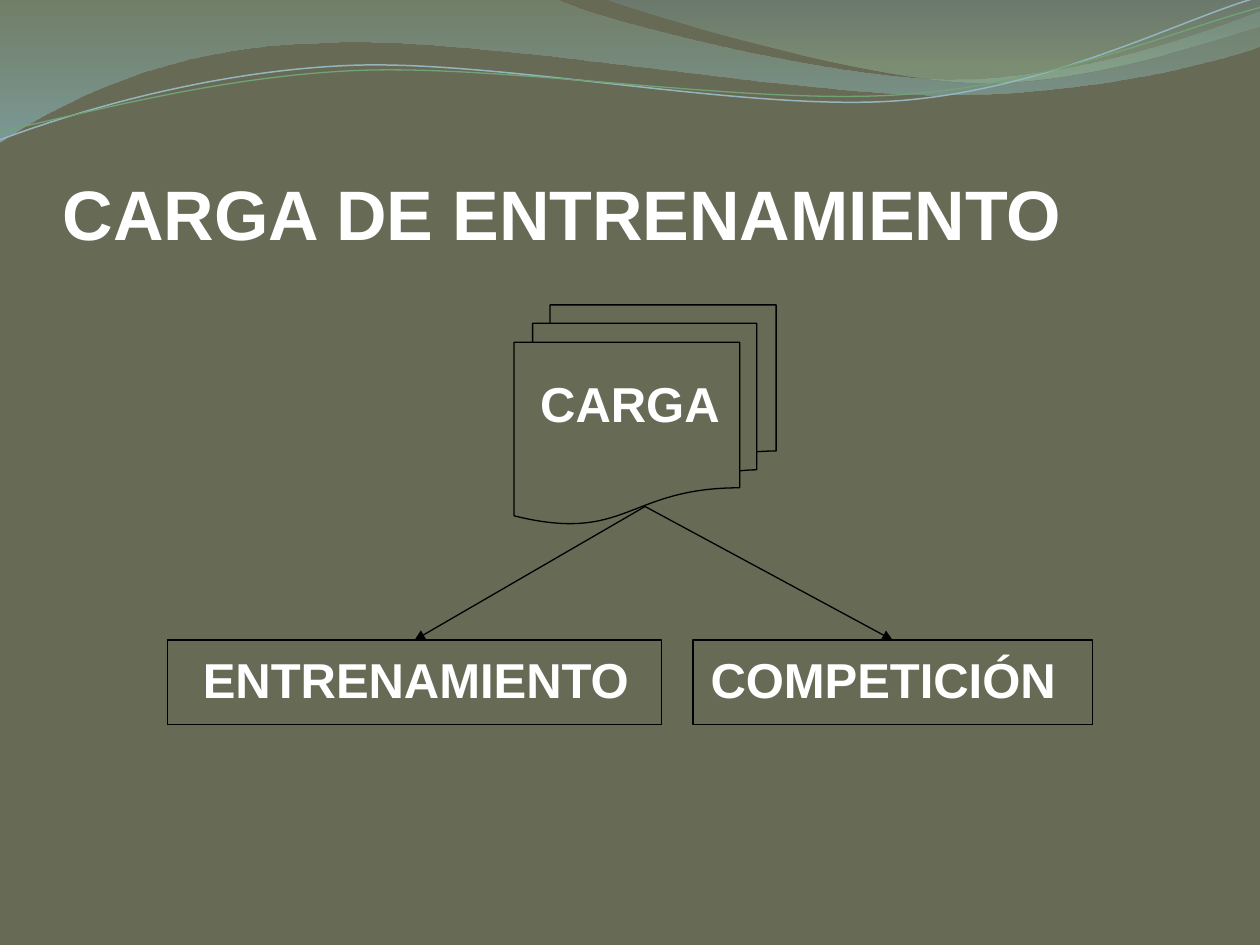
from pptx import Presentation
from pptx.dml.color import RGBColor
from pptx.enum.shapes import MSO_CONNECTOR as Connector, MSO_SHAPE as Shape
from pptx.enum.text import MSO_ANCHOR as Anchor, PP_ALIGN as Align
from pptx.oxml.ns import qn
from pptx.util import Inches, Pt
from lxml.etree import SubElement

THEME = {
    "font": "Arial", "title": 40, "label": 28, "line": 0.75,
    "background": "676A55", "text": "FFFFFF", "outline": "000000",
}

TITLE = "CARGA DE ENTRENAMIENTO"
# Text, preset, (left, top, width, height), (right, bottom) text insets
LOAD = ("CARGA", Shape.FLOWCHART_MULTIDOCUMENT, (4.08, 2.42, 2.08, 1.74), (0.05, 0.47))
KINDS = [
    ("ENTRENAMIENTO", Shape.RECTANGLE, (1.33, 5.08, 3.92, 0.67), (0.08, 0.11)),
    ("COMPETICIÓN", Shape.RECTANGLE, (5.5, 5.08, 3.17, 0.67), (0.25, 0.11)),
]
ARROW_START_Y = 4.02

# Outlines: two numbers are a corner, six are a Bézier curve.
# Gradient stops: position, colour, opacity in percent
BANDS = [
    ([(0, 0), (4.4, -0.01), (4.76, 0.17, 6.64, 0.63, 7.58, 0.63),
      (8.53, 0.63, 9.58, 0.26, 10, 0.09), (10.01, 0.36),
      (9.83, 0.44, 8.7, 0.76, 7.46, 0.75), (6.22, 0.75, 3.82, 0.28, 2.57, 0.34),
      (1.29, 0.36, 0.46, 0.83, -0.01, 1.13)],
     [(0, "809980", 45), (1, "8DC1CF", 55)]),
    ([(4.79, -0.01), (5.09, 0.11, 6.82, 0.62, 7.69, 0.65),
      (8.56, 0.69, 9.61, 0.32, 10, 0.21), (10, 0)],
     [(0, "779BA4", 30), (0.8, "96B996", 45)]),
]
WAVES = [
    ([(0, 1.11), (0.48, 0.93, 1.58, 0.57, 2.77, 0.52),
      (3.95, 0.47, 5.93, 0.89, 7.13, 0.8), (8.33, 0.71, 9.38, 0.15, 9.98, -0.02)],
     "94B5BE", 0.85),
    ([(0, 1.04), (0.47, 0.96, 1.64, 0.61, 2.83, 0.56),
      (4.03, 0.51, 5.97, 0.84, 7.17, 0.75), (8.36, 0.67, 9.41, 0.21, 10, 0.06)],
     "72A376", 0.75),
]


def color(name):
    return RGBColor.from_string(THEME.get(name, name))


def add_outline(page, outline, close):
    """Join the corners, then bend the sides that are Bézier curves."""
    corners = [tuple(map(Inches, part[-2:])) for part in outline]
    builder = page.shapes.build_freeform(*corners[0])
    builder.add_line_segments(corners[1:], close=close)
    shape = builder.convert_to_shape()
    shape.shadow.inherit = False
    sides = list(shape._element.spPr.iter(qn("a:lnTo")))
    for side, part in zip(sides, outline[1:]):
        if len(part) == 6:
            side.tag = qn("a:cubicBezTo")
            for point in list(side):
                side.remove(point)
            for x, y in zip(part[::2], part[1::2]):
                SubElement(side, qn("a:pt"), x=str(Inches(x) - shape.left),
                           y=str(Inches(y) - shape.top))
    return shape


def set_line(line, line_color, width):
    line.color.rgb = color(line_color)
    line.width = Pt(width)


def add_band(page, outline, stops):
    band = add_outline(page, outline, True)
    band.line.fill.background()
    band.fill.gradient()
    band.fill.gradient_angle = 270
    for stop, (position, stop_color, _) in zip(band.fill.gradient_stops, stops):
        stop.position = position
        stop.color.rgb = color(stop_color)
    for element, (_, _, opacity) in zip(band._element.spPr.iter(qn("a:srgbClr")), stops):
        SubElement(element, qn("a:alpha"), val=str(opacity * 1000))


def add_wave(page, outline, line_color, width):
    wave = add_outline(page, outline, False)
    wave.fill.background()
    set_line(wave.line, line_color, width)


def write(box, text, size, align, anchor, insets):
    frame = box.text_frame
    frame.text = text
    frame.word_wrap = True
    frame.vertical_anchor = anchor
    (frame.margin_left, frame.margin_top,
     frame.margin_right, frame.margin_bottom) = map(Inches, insets)
    para = frame.paragraphs[0]
    para.alignment = align
    font = para.runs[0].font
    font.name, font.size, font.bold = THEME["font"], Pt(THEME[size]), True
    font.color.rgb = color("text")


def add_node(page, text, preset, area, insets):
    node = page.shapes.add_shape(preset, *map(Inches, area))
    node.shadow.inherit = False
    node.fill.background()
    set_line(node.line, "outline", THEME["line"])
    right, bottom = insets
    write(node, text, "label", Align.CENTER, Anchor.MIDDLE, (0.1, 0.05, right, bottom))


def add_arrow(page, start, end):
    arrow = page.shapes.add_connector(Connector.STRAIGHT, *map(Inches, start + end))
    set_line(arrow.line, "outline", THEME["line"])
    SubElement(arrow.line._get_or_add_ln(), qn("a:tailEnd"), type="triangle")
    SubElement(arrow._element.spPr, qn("a:effectLst"))


def center_x(area):
    return area[0] + area[2] / 2


def main():
    deck = Presentation()
    deck.slide_width, deck.slide_height = Inches(10), Inches(7.5)
    page = deck.slides.add_slide(deck.slide_layouts[6])
    page.background.fill.solid()
    page.background.fill.fore_color.rgb = color("background")

    # Waves along the top
    for band in BANDS:
        add_band(page, *band)
    for wave in WAVES:
        add_wave(page, *wave)

    # Title
    title = page.shapes.add_textbox(*map(Inches, (0.5, 0.77, 9, 1.25)))
    write(title, TITLE, "title", Align.LEFT, Anchor.BOTTOM, (0, 0.05, 0, 0))

    # Load, split into its two kinds
    for kind in KINDS:
        add_node(page, *kind)
    for _, _, area, _ in KINDS:
        add_arrow(page, (center_x(LOAD[2]), ARROW_START_Y), (center_x(area), area[1]))
    add_node(page, *LOAD)

    deck.save("out.pptx")


if __name__ == "__main__":
    main()
